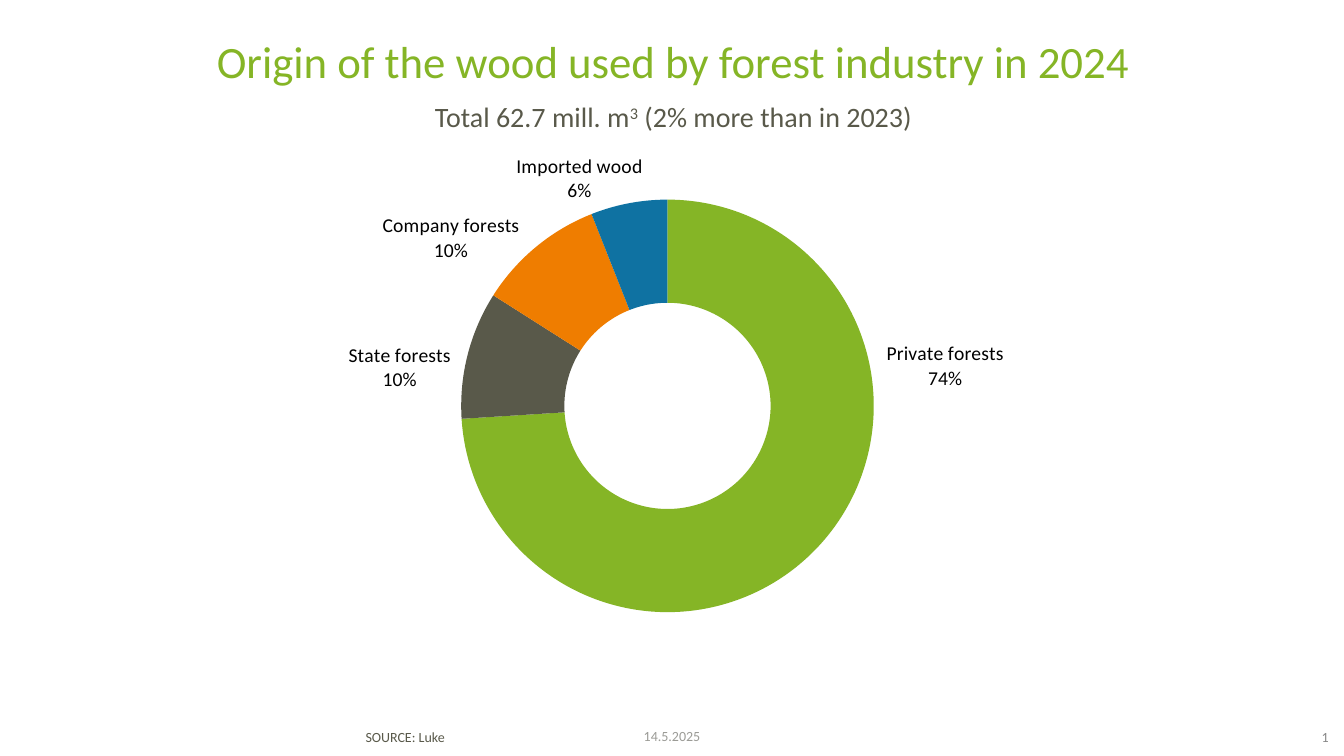
"""Build a slide with a doughnut chart of the origin of industrial wood."""
from lxml.etree import SubElement
from pptx import Presentation
from pptx.chart.data import CategoryChartData
from pptx.dml.color import RGBColor
from pptx.enum.chart import XL_CHART_TYPE
from pptx.enum.text import MSO_ANCHOR, PP_ALIGN
from pptx.oxml import parse_xml
from pptx.oxml.ns import nsdecls, qn
from pptx.util import Pt

FONT = "Calibri"
GREEN = RGBColor(0x85, 0xB5, 0x26)
OLIVE = RGBColor(0x59, 0x59, 0x4A)
ORANGE = RGBColor(0xEF, 0x7D, 0x00)
BLUE = RGBColor(0x0F, 0x72, 0xA2)
BLACK = RGBColor(0x00, 0x00, 0x00)
NUMBER_GREY = RGBColor(0x87, 0x87, 0x87)
DATE_GREY = RGBColor(0x9B, 0x9B, 0x96)

TITLE = "Origin of the wood used by forest industry in 2024"
SUBTITLE = [("Total 62.7 mill. m", False), ("3", True), (" (2% more than in 2023)", False)]
# Each origin: name, share, colour, label shift as a fraction of the chart size
ORIGINS = [
    ("Private forests", 0.74, GREEN, (0.14, -0.27)),
    ("State forests", 0.10, OLIVE, (-0.1, 0)),
    ("Company forests", 0.10, ORANGE, (-0.1, -0.09)),
    ("Imported wood", 0.06, BLUE, (-0.05, -0.14)),
]
PLOT_AREA = {"x": 0.32, "y": 0.11, "w": 0.35, "h": 0.77}
HOLE_PERCENT = 55
# Each footer: text, left, top, width, height, alignment, anchor, side inset, colour
FOOTERS = [
    ("SOURCE: Luke", 254, 517, 517, 19.5, PP_ALIGN.LEFT, MSO_ANCHOR.TOP, 7.2, OLIVE),
    ("14.5.2025", 372, 515, 216, 22, PP_ALIGN.CENTER, MSO_ANCHOR.MIDDLE, 7.2, DATE_GREY),
    ("1", 911, 521, 38, 14, PP_ALIGN.RIGHT, MSO_ANCHOR.MIDDLE, 0, NUMBER_GREY),
]


def style_font(font, size, color):
    """Set the typeface, size and colour of a font."""
    font.name = FONT
    font.size = Pt(size)
    font.color.rgb = color


def manual_layout(values, inner=False):
    """Return a chart layout element with the given fractions."""
    layout = parse_xml(f"<c:layout {nsdecls('c')}><c:manualLayout/></c:layout>")
    settings = dict(values)
    if inner:
        settings = {"layoutTarget": "inner", "xMode": "edge", "yMode": "edge", **settings}
    for tag, value in settings.items():
        SubElement(layout[0], qn(f"c:{tag}")).set("val", str(value))
    return layout


def add_heading(page):
    """Fill the title placeholder with the title and its subtitle."""
    box = page.shapes.title
    box.left, box.top, box.width, box.height = Pt(60), Pt(28), Pt(842), Pt(70.5)
    frame = box.text_frame
    frame.vertical_anchor = MSO_ANCHOR.MIDDLE
    frame.word_wrap = True
    frame.text = TITLE
    subtitle = frame.add_paragraph()
    subtitle.space_before = Pt(14)
    for text, raised in SUBTITLE:
        span = subtitle.add_run()
        span.text = text
        if raised:
            span.font._element.set("baseline", "30000")
    for para, size, color in zip(frame.paragraphs, (32, 20), (GREEN, OLIVE)):
        para.alignment = PP_ALIGN.CENTER
        para.line_spacing = 0.8
        style_font(para.font, size, color)


def add_origin_chart(page):
    """Add the doughnut chart with labels outside the ring."""
    data = CategoryChartData(number_format="0%")
    data.categories = [origin[0] for origin in ORIGINS]
    data.add_series("Series 1", [origin[1] for origin in ORIGINS])
    chart = page.shapes.add_chart(
        XL_CHART_TYPE.DOUGHNUT, Pt(60), Pt(99.4), Pt(842), Pt(385), data).chart
    chart.has_title = False
    chart.has_legend = False
    style_font(chart.font, 10, OLIVE)
    plot = chart.plots[0]
    plot.vary_by_categories = True
    plot._element.find(qn("c:holeSize")).set("val", str(HOLE_PERCENT))

    plot_area = plot._element.getparent()
    for layout in plot_area.findall(qn("c:layout")):
        plot_area.remove(layout)
    plot_area.insert(0, manual_layout(PLOT_AREA, inner=True))

    series = plot.series[0]
    labels = series.data_labels
    labels.show_category_name = True
    labels.show_value = True
    labels.number_format = "0%"
    labels.number_format_is_linked = False
    style_font(labels.font, 14, BLACK)
    for leader in labels._element.findall(qn("c:showLeaderLines")):
        leader.set("val", "0")
    for index, (_, _, color, _) in enumerate(ORIGINS):
        point = series.points[index]
        point.format.fill.solid()
        point.format.fill.fore_color.rgb = color
        point.format.line.fill.background()
        style_font(point.data_label.font, 14, BLACK)
    for label, origin in zip(labels._element.findall(qn("c:dLbl")), ORIGINS):
        label.insert(1, manual_layout(dict(zip("xy", origin[3]))))
        for tag, value in (("showVal", "1"), ("showCatName", "1"), ("showPercent", "0")):
            label.find(qn(f"c:{tag}")).set("val", value)
        SubElement(label, qn("c:separator")).text = "\n"


def add_footer(page, text, left, top, width, height, alignment, anchor, inset, color):
    """Add one small line of text at the foot of the slide."""
    frame = page.shapes.add_textbox(Pt(left), Pt(top), Pt(width), Pt(height)).text_frame
    frame.word_wrap = True
    frame.vertical_anchor = anchor
    frame.margin_left = frame.margin_right = Pt(inset)
    if not inset:
        frame.margin_top = Pt(0)
        frame.margin_bottom = Pt(3)
    frame.text = text
    para = frame.paragraphs[0]
    para.alignment = alignment
    style_font(para.font, 10, color)


def main():
    """Create the deck and save it."""
    deck = Presentation()
    deck.slide_width, deck.slide_height = Pt(960), Pt(540)
    page = deck.slides.add_slide(deck.slide_layouts[5])
    add_heading(page)
    add_origin_chart(page)
    for footer in FOOTERS:
        add_footer(page, *footer)
    deck.save("out.pptx")


if __name__ == "__main__":
    main()
